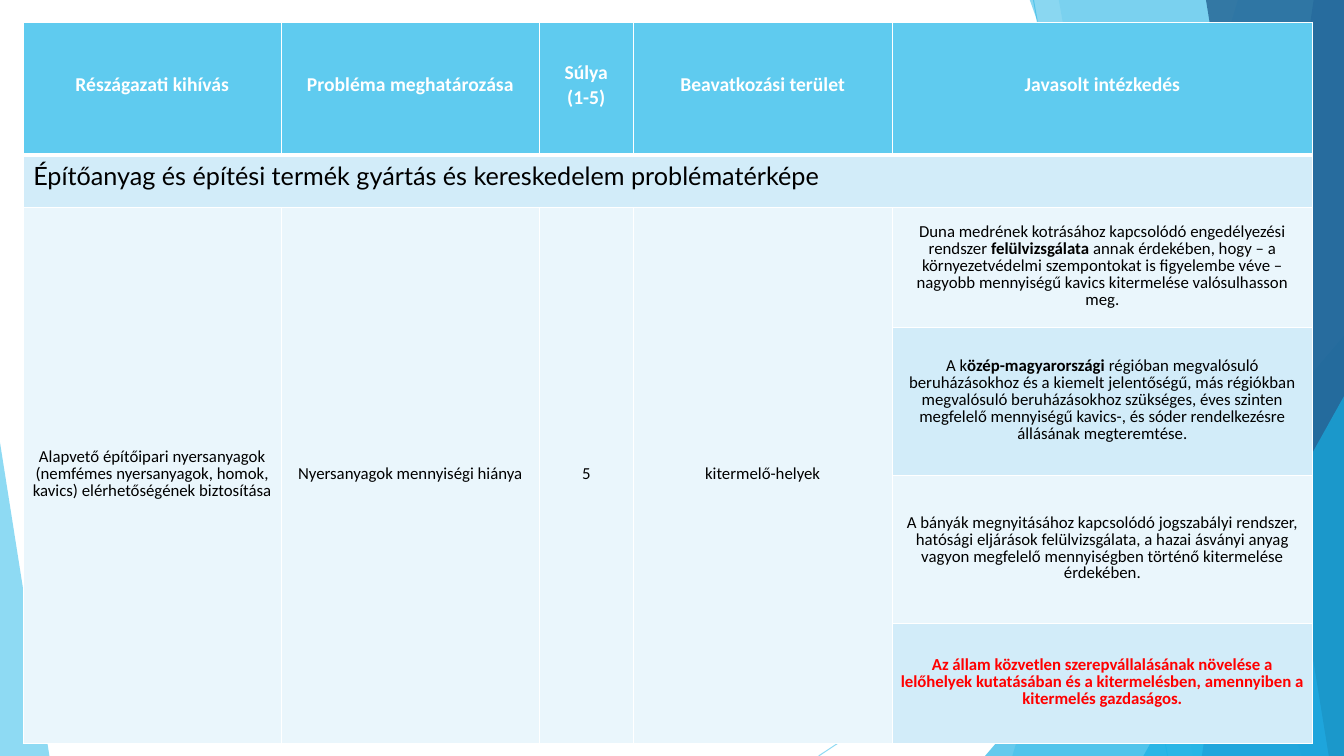
from dataclasses import dataclass

from lxml import etree
from pptx import Presentation
from pptx.dml.color import RGBColor
from pptx.enum.shapes import MSO_CONNECTOR, MSO_SHAPE
from pptx.enum.text import MSO_ANCHOR, PP_ALIGN
from pptx.oxml.ns import qn
from pptx.util import Inches, Pt

STRAIGHT = MSO_CONNECTOR.STRAIGHT
TRIANGLE = MSO_SHAPE.ISOSCELES_TRIANGLE
CENTER = PP_ALIGN.CENTER
MIDDLE = MSO_ANCHOR.MIDDLE


@dataclass(frozen=True)
class Theme:
    sky: str = "5FCBEF"
    cyan: str = "17B0E4"
    blue: str = "2E83C3"
    navy: str = "226292"
    band_dark: str = "D2ECF9"
    band_light: str = "EAF6FC"
    white: str = "FFFFFF"
    black: str = "000000"
    red: str = "FF0000"
    body_font: str = "Calibri"
    section_font: str = "Lato"
    header_size: int = 14
    section_size: int = 18
    body_size: int = 12


T = Theme()
TOP, BOTTOM, RIGHT = -0.01, 7.5, 13.33

COLUMN_WIDTHS = [2.56, 2.56, 0.93, 2.57, 4.17]
ROW_HEIGHTS = [1.32, 0.52, 1.19, 1.47, 1.47, 1.19]
HEADERS = ["Részágazati kihívás", "Probléma meghatározása", "Súlya\n(1-5)",
           "Beavatkozási terület", "Javasolt intézkedés"]
SECTION = "Építőanyag és építési termék gyártás és kereskedelem problématérképe"
PROBLEM = [
    "Alapvető építőipari nyersanyagok (nemfémes nyersanyagok, homok, kavics) "
    "elérhetőségének biztosítása",
    "Nyersanyagok mennyiségi hiánya", "5", "kitermelő-helyek"]
# Each measure is a list of runs: (text, bold, colour)
MEASURES = [
    [("Duna medrének kotrásához kapcsolódó engedélyezési rendszer ", False, T.black),
     ("felülvizsgálata", True, T.black),
     (" annak érdekében, hogy – a környezetvédelmi szempontokat is figyelembe véve – "
      "nagyobb mennyiségű kavics kitermelése valósulhasson meg.", False, T.black)],
    [("A k", False, T.black),
     ("özép-magyarországi ", True, T.black),
     ("régióban megvalósuló beruházásokhoz és a kiemelt jelentőségű, más régiókban "
      "megvalósuló beruházásokhoz szükséges, éves szinten megfelelő mennyiségű "
      "kavics-, és sóder rendelkezésre állásának megteremtése.", False, T.black)],
    [("A bányák megnyitásához kapcsolódó jogszabályi rendszer, hatósági eljárások "
      "felülvizsgálata, a hazai ásványi anyag vagyon megfelelő mennyiségben történő "
      "kitermelése érdekében.", False, T.black)],
    [("Az állam közvetlen szerepvállalásának növelése a lelőhelyek kutatásában és a "
      "kitermelésben, amennyiben a kitermelés gazdaságos.", True, T.red)],
]


def rgb(color):
    return RGBColor.from_string(color)


def set_fill(fill, color, opacity=100):
    fill.solid()
    fill.fore_color.rgb = rgb(color)
    if opacity < 100:
        set_opacity(fill, opacity)


def set_opacity(fill, opacity):
    clr = fill._xPr.find(qn("a:solidFill"))[0]
    etree.SubElement(clr, qn("a:alpha"), val=str(opacity * 1000))


def finish_facet(shape, color, opacity):
    shape.shadow.inherit = False
    shape.line.fill.background()
    set_fill(shape.fill, color, opacity)


def add_facet(s, left_top, right_top, left_bottom, color, opacity):
    """Add a slanted panel that reaches the right and bottom slide edges."""
    points = [(left_top, TOP), (right_top, TOP), (RIGHT, BOTTOM), (left_bottom, BOTTOM)]
    points = [(Inches(x), Inches(y)) for x, y in points]
    builder = s.shapes.build_freeform(*points[0])
    builder.add_line_segments(points[1:], close=True)
    finish_facet(builder.convert_to_shape(), color, opacity)


def add_triangle(s, left, top, width, apex, color, opacity):
    """Add a triangle standing on the bottom edge of the slide."""
    sp = s.shapes.add_shape(TRIANGLE, Inches(left), Inches(top),
                            Inches(width), Inches(BOTTOM - top))
    sp.adjustments[0] = apex
    finish_facet(sp, color, opacity)


def add_thin_line(s, x1, y1, x2, y2):
    line = s.shapes.add_connector(STRAIGHT, Inches(x1), Inches(y1), Inches(x2), Inches(y2))
    line.line.width = Pt(0.75)
    set_fill(line.line.fill, T.sky, 70)
    etree.SubElement(line._element.spPr, qn("a:effectLst"))


def add_background(s):
    add_thin_line(s, 10.25, 0, 11.58, BOTTOM)
    add_thin_line(s, RIGHT, 4.03, 8.12, BOTTOM)
    add_facet(s, 12.28, RIGHT, 10.04, T.sky, 36)
    add_facet(s, 10.5, RIGHT, 11.83, T.sky, 20)
    add_triangle(s, 9.77, 3.33, 3.56, 1, T.cyan, 66)
    add_facet(s, 10.21, RIGHT, 12.91, T.cyan, 50)
    add_facet(s, 13.03, RIGHT, 11.92, T.blue, 70)
    add_facet(s, 11.96, RIGHT, 13.18, T.navy, 80)
    add_triangle(s, 11.34, 3.93, 1.99, 1, T.cyan, 66)
    add_triangle(s, 0, 4.39, 0.49, 0, T.sky, 70)


def style_cell(cell, color, top=1, bottom=1):
    """Fill a cell and give it white borders; top and bottom are widths in points."""
    tc_pr = cell._tc.get_or_add_tcPr()
    for side, width in (("L", 1), ("R", 1), ("T", top), ("B", bottom)):
        ln = etree.SubElement(tc_pr, qn(f"a:ln{side}"), w=str(Pt(width)))
        solid = etree.SubElement(ln, qn("a:solidFill"))
        etree.SubElement(solid, qn("a:srgbClr"), val=T.white)
    set_fill(cell.fill, color)


def format_run(r, size, color, bold=False, font=T.body_font):
    r.font.name = font
    r.font.size = Pt(size)
    r.font.bold = bold
    r.font.color.rgb = rgb(color)


def center_cell(cell):
    cell.vertical_anchor = MIDDLE
    cell.margin_left = cell.margin_right = Inches(0.07)
    cell.margin_top = cell.margin_bottom = 0
    for p in cell.text_frame.paragraphs:
        p.alignment = CENTER
        p.line_spacing = Pt(12)
        p.space_before = p.space_after = Pt(3)


def write_cell(cell, text, size, color, bold=False):
    cell.text_frame.text = text
    center_cell(cell)
    for p in cell.text_frame.paragraphs:
        format_run(p.runs[0], size, color, bold)


def write_measure(cell, runs):
    p = cell.text_frame.paragraphs[0]
    for text, bold, color in runs:
        r = p.add_run()
        r.text = text
        format_run(r, T.body_size, color, bold)
    center_cell(cell)


def add_problem_map(s):
    table = s.shapes.add_table(
        len(ROW_HEIGHTS), len(COLUMN_WIDTHS), Inches(0.23), Inches(0.22),
        Inches(sum(COLUMN_WIDTHS)), Inches(sum(ROW_HEIGHTS))).table
    for column, width in zip(table.columns, COLUMN_WIDTHS):
        column.width = Inches(width)
    for row, height in zip(table.rows, ROW_HEIGHTS):
        row.height = Inches(height)
    last = len(COLUMN_WIDTHS) - 1

    for col, header in enumerate(HEADERS):
        style_cell(table.cell(0, col), T.sky, bottom=3)
        write_cell(table.cell(0, col), header, T.header_size, T.white, True)
        style_cell(table.cell(1, col), T.band_dark, top=3)
    table.cell(1, 0).merge(table.cell(1, last))
    p = table.cell(1, 0).text_frame.paragraphs[0]
    p.text = SECTION
    format_run(p.runs[0], T.section_size, T.black, font=T.section_font)

    for row, measure in enumerate(MEASURES, start=2):
        for col in range(last):
            style_cell(table.cell(row, col), T.band_light)
        style_cell(table.cell(row, last), T.band_dark if row % 2 else T.band_light)
        write_measure(table.cell(row, last), measure)
    for col, text in enumerate(PROBLEM):
        table.cell(2, col).merge(table.cell(len(ROW_HEIGHTS) - 1, col))
        write_cell(table.cell(2, col), text, T.body_size, T.black)


def main():
    prs = Presentation()
    prs.slide_width, prs.slide_height = Inches(13.33), Inches(7.5)
    s = prs.slides.add_slide(prs.slide_layouts[6])
    add_background(s)
    add_problem_map(s)
    prs.save("out.pptx")


if __name__ == "__main__":
    main()
